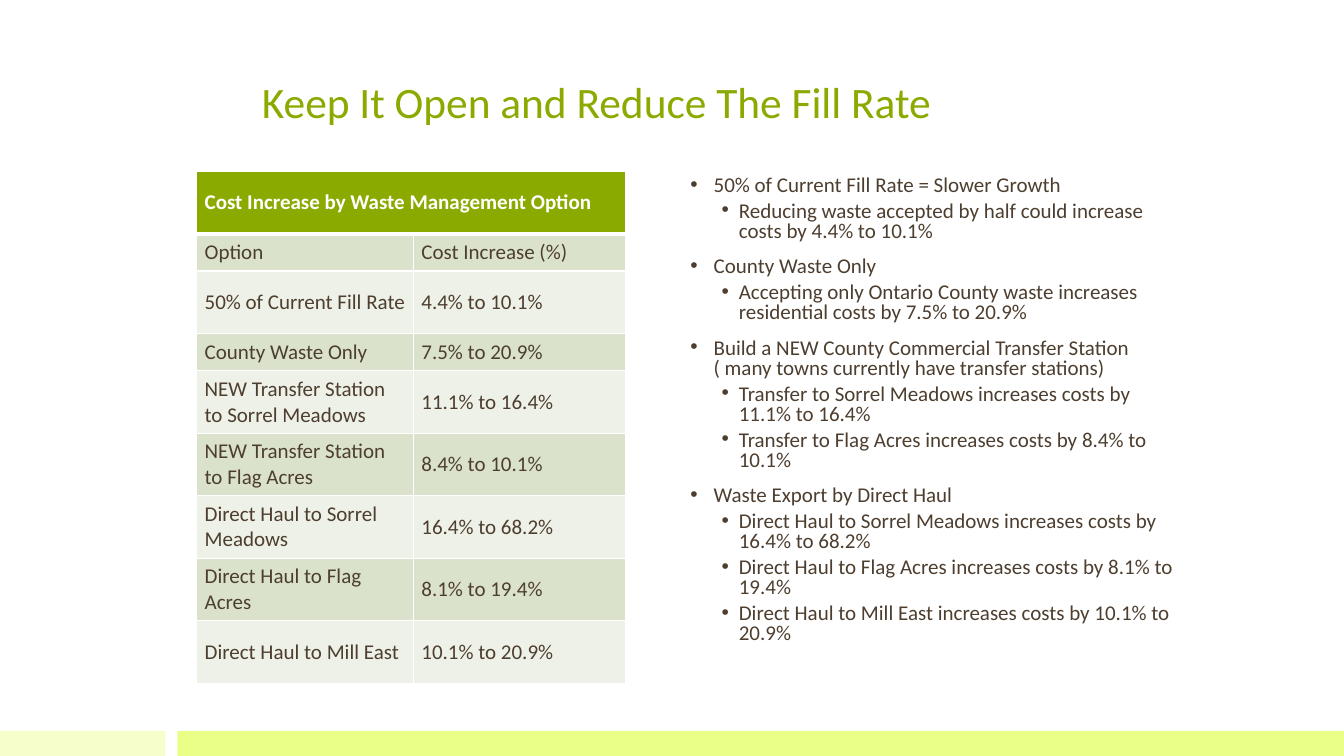
from dataclasses import dataclass

from lxml.etree import SubElement
from pptx import Presentation
from pptx.dml.color import RGBColor
from pptx.enum.shapes import MSO_SHAPE
from pptx.enum.text import MSO_ANCHOR
from pptx.oxml.ns import qn
from pptx.util import Pt

PX = 9144


@dataclass(frozen=True)
class Theme:
    font: str = "Calibri"
    bullet_font: str = "Arial"
    green: str = "8BAA00"
    brown: str = "4D3E2F"
    white: str = "FFFFFF"
    bands: tuple = ("DAE2CC", "EEF1E7")
    footer_pale: str = "F6FFCC"
    footer_bright: str = "E9FF88"
    title_size: int = 31
    body_size: int = 15


THEME = Theme()

HEADING = "Keep It Open and Reduce The Fill Rate"
TABLE_HEADING = "Cost Increase by Waste Management Option"
TABLE_ROWS = [
    ("Option", "Cost Increase (%)"),
    ("50% of Current Fill Rate", "4.4% to 10.1%"),
    ("County Waste Only", "7.5% to 20.9%"),
    ("NEW Transfer Station to Sorrel Meadows", "11.1% to 16.4%"),
    ("NEW Transfer Station to Flag Acres", "8.4% to 10.1%"),
    ("Direct Haul to Sorrel Meadows", "16.4% to 68.2%"),
    ("Direct Haul to Flag Acres", "8.1% to 19.4%"),
    ("Direct Haul to Mill East", "10.1% to 20.9%"),
]
COLUMN_WIDTHS = (215, 210)
ROW_HEIGHTS = (62, 37, 62, 37, 62, 62, 62, 62, 62)

OPTIONS = [
    ("50% of Current Fill Rate = Slower Growth", [
        "Reducing waste accepted by half could increase costs by 4.4% to 10.1%",
    ]),
    ("County Waste Only", [
        "Accepting only Ontario County waste increases residential costs by 7.5% to 20.9%",
    ]),
    ("Build a NEW County Commercial Transfer Station ( many towns currently have transfer stations)", [
        "Transfer to Sorrel Meadows increases costs by 11.1% to 16.4%",
        "Transfer to Flag Acres increases costs by 8.4% to 10.1%",
    ]),
    ("Waste Export by Direct Haul", [
        "Direct Haul to Sorrel Meadows increases costs by 16.4% to 68.2%",
        "Direct Haul to Flag Acres increases costs by 8.1% to 19.4%",
        "Direct Haul to Mill East increases costs by 10.1% to 20.9%",
    ]),
]


def emu(*lengths):
    return [length * PX for length in lengths]


def color(value):
    return RGBColor.from_string(value)


def write(paragraph, text, size=THEME.body_size, fill=THEME.brown, bold=False):
    run = paragraph.add_run()
    run.text = text
    run.font.name = THEME.font
    run.font.size = Pt(size)
    run.font.bold = bold
    run.font.color.rgb = color(fill)


def add_text_frame(slide, box, anchor):
    frame = slide.shapes.add_textbox(*emu(*box)).text_frame
    frame.word_wrap = True
    frame.vertical_anchor = anchor
    return frame


def add_title(slide, box):
    frame = add_text_frame(slide, box, MSO_ANCHOR.BOTTOM)
    write(frame.paragraphs[0], HEADING, size=THEME.title_size, fill=THEME.green)


def add_footer(slide, box):
    left, top, width, height = box
    pale_width, gap = 164, 12
    bright_left = pale_width + gap
    bars = (
        (left, pale_width, THEME.footer_pale),
        (left + bright_left, width - bright_left, THEME.footer_bright),
    )
    for bar_left, bar_width, fill in bars:
        shape = slide.shapes.add_shape(
            MSO_SHAPE.RECTANGLE, *emu(bar_left, top, bar_width, height))
        shape.shadow.inherit = False
        shape.fill.solid()
        shape.fill.fore_color.rgb = color(fill)
        shape.line.fill.background()


def set_borders(cell, bottom_points):
    properties = cell._tc.get_or_add_tcPr()
    for side, points in (("L", 1), ("R", 1), ("T", 1), ("B", bottom_points)):
        line = SubElement(properties, qn(f"a:ln{side}"), w=str(Pt(points)))
        solid = SubElement(line, qn("a:solidFill"))
        SubElement(solid, qn("a:srgbClr"), val=THEME.white)


def format_cell(cell, fill, bottom_points=1):
    set_borders(cell, bottom_points)
    cell.fill.solid()
    cell.fill.fore_color.rgb = color(fill)
    cell.vertical_anchor = MSO_ANCHOR.MIDDLE
    cell.margin_left, cell.margin_right = emu(8, 8)
    cell.margin_top, cell.margin_bottom = emu(4, 4)


def add_cost_table(slide, box):
    table = slide.shapes.add_table(
        len(ROW_HEIGHTS), len(COLUMN_WIDTHS), *emu(*box)).table
    for column, width in zip(table.columns, emu(*COLUMN_WIDTHS)):
        column.width = width
    for row, height in zip(table.rows, emu(*ROW_HEIGHTS)):
        row.height = height

    heading = table.cell(0, 0)
    heading.merge(table.cell(0, 1))
    for column_index in range(len(COLUMN_WIDTHS)):
        format_cell(table.cell(0, column_index), THEME.green, bottom_points=3)
    write(heading.text_frame.paragraphs[0], TABLE_HEADING,
          fill=THEME.white, bold=True)

    for row_index, values in enumerate(TABLE_ROWS):
        for column_index, value in enumerate(values):
            cell = table.cell(row_index + 1, column_index)
            format_cell(cell, THEME.bands[row_index % 2])
            write(cell.text_frame.paragraphs[0], value)


def add_bullet(paragraph, text, level):
    margin, hanging, space_before = ((23, 23, 11), (48, 17, 4))[level]
    paragraph.level = level
    paragraph.line_spacing = 0.8
    paragraph.space_before = Pt(space_before)
    properties = paragraph._p.get_or_add_pPr()
    properties.set("marL", str(margin * PX))
    properties.set("indent", str(-hanging * PX))
    SubElement(properties, qn("a:buFont"), typeface=THEME.bullet_font)
    SubElement(properties, qn("a:buChar"), char="•")
    write(paragraph, text)


def add_option_list(slide, box):
    frame = add_text_frame(slide, box, MSO_ANCHOR.TOP)
    items = []
    for option, details in OPTIONS:
        items.append((option, 0))
        items.extend((detail, 1) for detail in details)
    for index, (text, level) in enumerate(items):
        paragraph = frame.add_paragraph() if index else frame.paragraphs[0]
        add_bullet(paragraph, text, level)


def main():
    presentation = Presentation()
    presentation.slide_width, presentation.slide_height = emu(1333, 750)
    slide = presentation.slides.add_slide(presentation.slide_layouts[6])
    slide.background.fill.solid()
    slide.background.fill.fore_color.rgb = color(THEME.white)
    add_footer(slide, (0, 725, 1333, 25))
    add_title(slide, (250, 65, 739, 66))
    add_option_list(slide, (675, 170, 504, 505))
    add_cost_table(slide, (195, 170, sum(COLUMN_WIDTHS), sum(ROW_HEIGHTS)))
    presentation.save("out.pptx")


if __name__ == "__main__":
    main()
